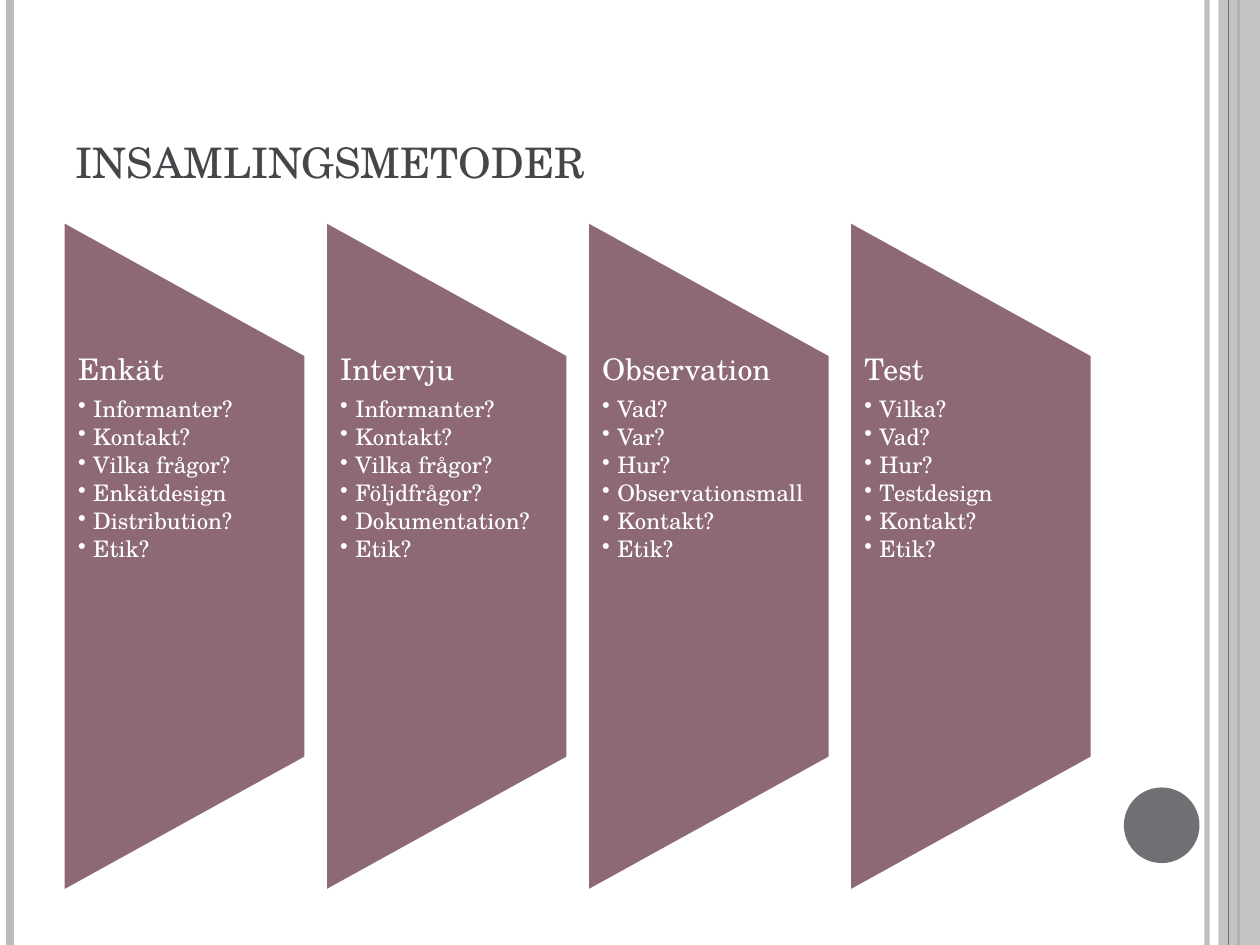
from pptx import Presentation
from pptx.dml.color import RGBColor
from pptx.enum.shapes import MSO_CONNECTOR as Conn, MSO_SHAPE as Shape
from pptx.enum.text import MSO_ANCHOR as Anchor
from pptx.oxml.ns import qn
from pptx.util import Inches, Pt
from lxml.etree import SubElement

TITLE = "insamlingsmetoder"
PANELS = [
    ("Enkät", ["Informanter?", "Kontakt?", "Vilka frågor?",
               "Enkätdesign", "Distribution?", "Etik?"]),
    ("Intervju", ["Informanter?", "Kontakt?", "Vilka frågor?",
                  "Följdfrågor?", "Dokumentation?", "Etik?"]),
    ("Observation", ["Vad?", "Var?", "Hur?",
                     "Observationsmall", "Kontakt?", "Etik?"]),
    ("Test", ["Vilka?", "Vad?", "Hur?", "Testdesign", "Kontakt?", "Etik?"]),
]
THEME = {
    "font": "TeX Gyre Schola",
    "title": "46464A", "panel": "8D6974", "light": "FFFFFF",
    "pale": "BBBBBC", "dark": "6F6F74",
    "title_size": 30, "head_size": 17, "item_size": 13,
}
# x, colour, width in points, opacity in percent
RULES = [(9.58, "pale", 3, 93), (0.08, "pale", 4.5, 100), (9.83, "dark", 1.5, 100)]
INNER_RULE = (9.75, "dark", 0.75, 100)

WIDE, HIGH = 10, 7.5
LEFT, SPAN, GAP = 0.5, 8.17, 0.15
TOP, TALL = 1.75, 5.33
COL = (SPAN - GAP * (len(PANELS) - 1)) / len(PANELS)
INSET = 0.12


def box(*sides):
    return [Inches(side) for side in sides]


def paint(fill, color, alpha=100):
    fill.solid()
    fill.fore_color.rgb = RGBColor.from_string(THEME[color])
    if alpha < 100:
        tint = fill._xPr.find(qn("a:solidFill"))[0]
        SubElement(tint, qn("a:alpha")).set("val", str(alpha * 1000))


def add_rule(slide, x, color, width, alpha):
    rule = slide.shapes.add_connector(Conn.STRAIGHT, *box(x, 0, x, HIGH))
    rule.line.width = Pt(width)
    paint(rule.line.fill, color, alpha)
    SubElement(rule._element.spPr, qn("a:effectLst"))


def add_form(slide, kind, sides, color, alpha=100):
    form = slide.shapes.add_shape(kind, *box(*sides))
    form.shadow.inherit = False
    paint(form.fill, color, alpha)
    form.line.fill.background()
    return form


def style(para, size, color):
    font = para.font
    font.name, font.size = THEME["font"], Pt(THEME[size])
    font.color.rgb = RGBColor.from_string(THEME[color])


def add_bullet(para):
    props = para._p.get_or_add_pPr()
    props.set("marL", str(Inches(INSET)))
    props.set("indent", str(-Inches(INSET)))
    SubElement(props, qn("a:buChar")).set("char", "•")


def add_title(slide):
    frame = slide.shapes.add_textbox(*box(LEFT, 0.3, SPAN, 1.25)).text_frame
    frame.word_wrap = True
    frame.vertical_anchor = Anchor.BOTTOM
    para = frame.paragraphs[0]
    run = para.add_run()
    run.text = TITLE
    style(para, "title_size", "title")
    run._r.get_or_add_rPr().set("cap", "small")


def add_panel(slide, col, head, items):
    x = LEFT + col * (COL + GAP)
    # A quarter turn swaps the sides about the panel's centre.
    turn = (TALL - COL) / 2
    form = add_form(slide, Shape.FLOWCHART_MANUAL_OPERATION,
                    (x - turn, TOP + turn, TALL, COL), "panel")
    form.rotation = 270
    paint(form.line.fill, "light")
    form.line.width = Pt(2)

    sides = box(x, TOP + TALL / 5, COL, TALL * 3 / 5)
    frame = slide.shapes.add_textbox(*sides).text_frame
    frame.word_wrap = True
    frame.margin_left = frame.margin_right = Inches(INSET)
    frame.margin_top = frame.margin_bottom = 0
    for row, text in enumerate([head] + items):
        para = frame.add_paragraph() if row else frame.paragraphs[0]
        para.text = text
        para.line_spacing = 0.9
        para.space_after = Pt(2 if row else 6)
        style(para, "item_size" if row else "head_size", "light")
        if row:
            para.level = 1
            add_bullet(para)


def main():
    deck = Presentation()
    deck.slide_width, deck.slide_height = box(WIDE, HIGH)
    slide = deck.slides.add_slide(deck.slide_layouts[6])
    for rule in RULES:
        add_rule(slide, *rule)
    add_form(slide, Shape.RECTANGLE, (9.67, 0, 0.33, HIGH), "pale", 87)
    add_rule(slide, *INNER_RULE)
    add_form(slide, Shape.OVAL, (8.92, 6.25, 0.6, 0.6), "dark")
    add_title(slide)
    for col, (head, items) in enumerate(PANELS):
        add_panel(slide, col, head, items)
    deck.save("out.pptx")


if __name__ == "__main__":
    main()
